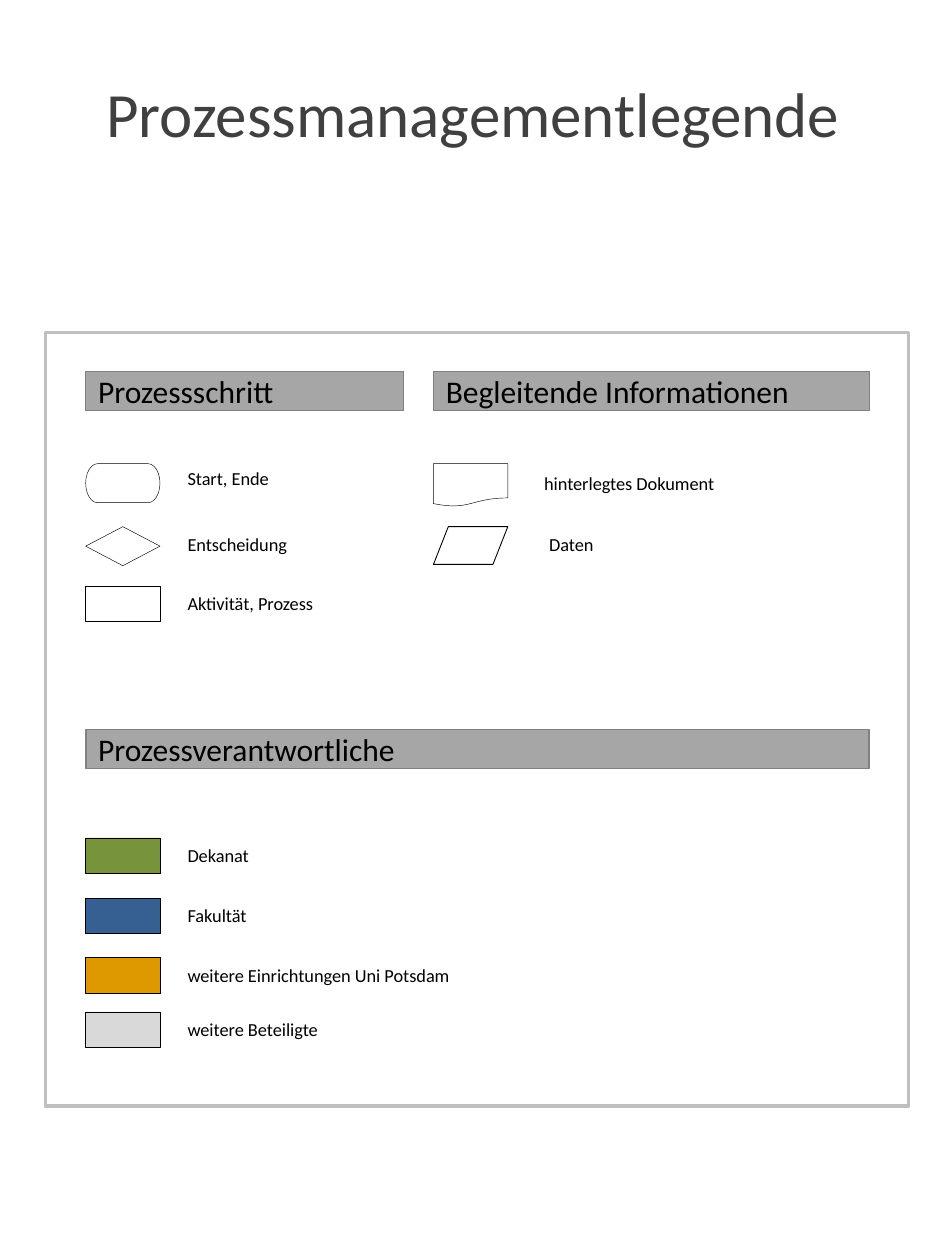
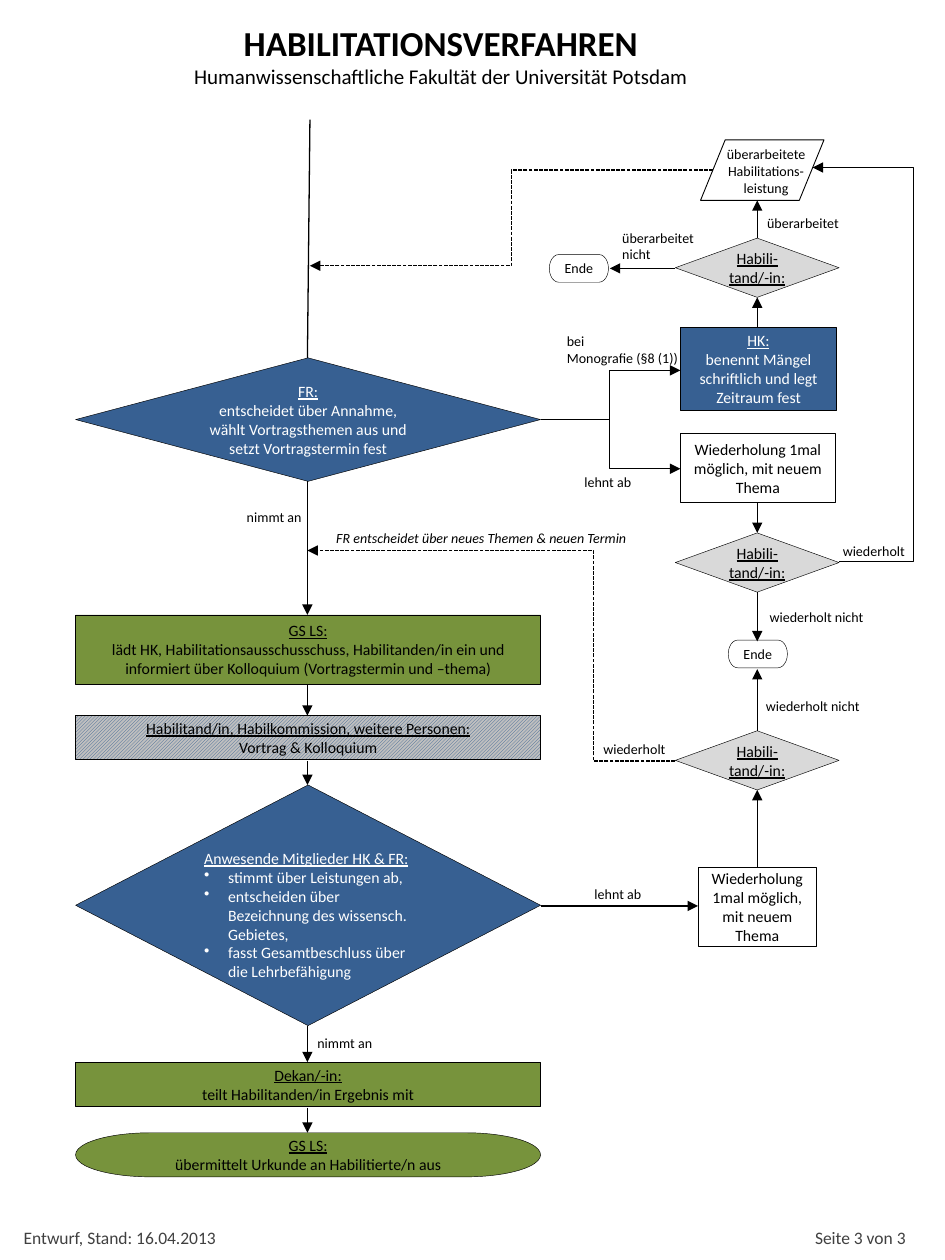
from lxml import etree
from pptx import Presentation
from pptx import util as u
from pptx.dml import color
from pptx.enum import dml, shapes, text
from pptx.oxml import ns

FONT = "Calibri"
COLORS = {
    "black": "000000",
    "white": "FFFFFF",
    "dark_grey": "404040",
    "band_line": "808080",
    "band": "A6A6A6",
    "frame": "BFBFBF",
    "light_grey": "D9D9D9",
    "green": "77933C",
    "blue": "376092",
    "orange": "DE9800",
}
RGB = {name: color.RGBColor.from_string(value) for name, value in COLORS.items()}
KIND = shapes.MSO_SHAPE
RECT, DECISION = KIND.RECTANGLE, KIND.FLOWCHART_DECISION
TERMINATOR, DATA = KIND.FLOWCHART_TERMINATOR, KIND.FLOWCHART_DATA
CENTER, LEFT = text.PP_ALIGN.CENTER, text.PP_ALIGN.LEFT
MIDDLE, TOP = text.MSO_ANCHOR.MIDDLE, text.MSO_ANCHOR.TOP


def write(slide, at, words="", head="", kind=None, fill=None, line="black", width=0.25,
          size=9, ink="black", align=LEFT, anchor=TOP, italic=False, bullets=False,
          side=0.1, top=0.05):
    """Add a shape of the given kind, or a text box, with an underlined head and text."""
    box = [u.Inches(length) for length in at]
    if kind is None:
        item = slide.shapes.add_textbox(*box)
    else:
        item = slide.shapes.add_shape(kind, *box)
        item.shadow.inherit = False
        item.line.color.rgb = RGB[line]
        item.line.width = u.Pt(width)
        if fill == "hatched":
            item.fill.patterned()
            item.fill.pattern = dml.MSO_PATTERN.LIGHT_UPWARD_DIAGONAL
            item.fill.fore_color.rgb = RGB["blue"]
            item.fill.back_color.rgb = RGB["frame"]
        elif fill:
            item.fill.solid()
            item.fill.fore_color.rgb = RGB[fill]
        else:
            item.fill.background()
    frame = item.text_frame
    frame.word_wrap = True
    frame.vertical_anchor = anchor
    frame.margin_left = frame.margin_right = u.Inches(side)
    frame.margin_top = u.Inches(top)
    lines = ([head] if head else []) + (words.split("\n") if words else [])
    for number, content in enumerate(lines):
        paragraph = frame.paragraphs[0] if number == 0 else frame.add_paragraph()
        paragraph.alignment = align
        is_head = bool(head) and number == 0
        if bullets and not is_head:
            props = paragraph._p.get_or_add_pPr()
            props.set("marL", str(u.Inches(0.19)))
            props.set("indent", str(-u.Inches(0.19)))
            etree.SubElement(props, ns.qn("a:buChar"), char="•")
        run = paragraph.add_run()
        run.text = content
        run.font.name, run.font.size = FONT, u.Pt(size)
        run.font.color.rgb = RGB[ink]
        run.font.underline = is_head
        run.font.italic = italic
    return frame


def link(slide, start, end, bend=None, dashed=False, arrow=True):
    """Draw a straight line, or an elbow whose upright part stands at x = bend."""
    route = shapes.MSO_CONNECTOR.STRAIGHT if bend is None else shapes.MSO_CONNECTOR.ELBOW
    joint = slide.shapes.add_connector(route, *[u.Inches(v) for v in (*start, *end)])
    joint.line.color.rgb = RGB["black"]
    joint.line.width = u.Pt(0.75)
    if dashed:
        joint.line.dash_style = dml.MSO_LINE.SQUARE_DOT
    props = joint._element.spPr
    if bend is not None:
        share = round((bend - start[0]) / (end[0] - start[0]) * 100000)
        guides = props.find(ns.qn("a:prstGeom")).get_or_add_avLst()
        etree.SubElement(guides, ns.qn("a:gd"), name="adj1", fmla=f"val {share}")
    if arrow:
        etree.SubElement(props.find(ns.qn("a:ln")), ns.qn("a:tailEnd"), type="triangle")
    etree.SubElement(props, ns.qn("a:effectLst"))


deck = Presentation()
deck.slide_width, deck.slide_height = u.Inches(7.5), u.Inches(10)
blank = deck.slide_layouts[6]

# Slide 1: legend
legend = deck.slides.add_slide(blank)
write(legend, (0.36, 2.64, 6.85, 6.14), kind=RECT, line="frame", width=2)
write(legend, (0.38, 0.4, 6.75, 0.98), "Prozessmanagementlegende", size=36,
      ink="dark_grey", align=CENTER, anchor=MIDDLE)

# Section bands
for left, top, width, border, section in [
    (0.68, 2.95, 2.52, 0.5, "Prozessschritt"),
    (3.44, 2.95, 3.46, 0.5, "Begleitende Informationen"),
    (0.68, 5.79, 6.22, 1, "Prozessverantwortliche"),
]:
    write(legend, (left, top, width, 0.31), section, kind=RECT, fill="band",
          line="band_line", width=border, size=18, anchor=MIDDLE)

# Symbols with their meanings
for kind, left, top, height, fill, border, label_left, label_top, meaning in [
    (TERMINATOR, 0.68, 3.68, 0.31, None, 0.25, 1.39, 3.66, "Start, Ende"),
    (DECISION, 0.68, 4.18, 0.31, None, 0.25, 1.39, 4.18, "Entscheidung"),
    (RECT, 0.68, 4.65, 0.28, None, 0.25, 1.39, 4.65, "Aktivität, Prozess"),
    (KIND.FLOWCHART_DOCUMENT, 3.44, 3.68, 0.34, None, 0.25, 4.22, 3.7,
     "hinterlegtes Dokument"),
    (DATA, 3.44, 4.18, 0.3, None, 0.5, 4.26, 4.18, "Daten"),
    (RECT, 0.68, 6.65, 0.28, "green", 0.25, 1.39, 6.65, "Dekanat"),
    (RECT, 0.68, 7.13, 0.28, "blue", 0.25, 1.39, 7.13, "Fakultät"),
    (RECT, 0.68, 7.6, 0.28, "orange", 0.25, 1.39, 7.6, "weitere Einrichtungen Uni Potsdam"),
    (RECT, 0.68, 8.03, 0.28, "light_grey", 0.25, 1.39, 8.03, "weitere Beteiligte"),
]:
    write(legend, (left, top, 0.59, height), kind=kind, fill=fill, width=border)
    write(legend, (label_left, label_top, 2.4, 0.28), meaning, size=10.5)

# Slide 2: habilitation procedure
process = deck.slides.add_slide(blank)
heading = write(process, (0.92, 0.12, 5.16, 0.64),
                "HABILITATIONSVERFAHREN\nHumanwissenschaftliche Fakultät der Universität Potsdam",
                size=12, align=CENTER)
name_font = heading.paragraphs[0].runs[0].font
name_font.size, name_font.bold = u.Pt(20), True

# Main column
for kind, top, height, fill, ink, head, words in [
    (DECISION, 2.84, 0.98, "blue", "white", "FR:",
     "entscheidet über Annahme, wählt Vortragsthemen aus und setzt Vortragstermin fest"),
    (RECT, 4.88, 0.55, "green", "black", "GS LS:",
     "lädt HK, Habilitationsausschusschuss, Habilitanden/in ein und "
     "informiert über Kolloquium (Vortragstermin und –thema)"),
    (RECT, 5.68, 0.35, "hatched", "black",
     "Habilitand/in, Habilkommission, weitere Personen:", "Vortrag & Kolloquium"),
    (RECT, 8.43, 0.35, "green", "black", "Dekan/-in:", "teilt Habilitanden/in Ergebnis mit"),
    (TERMINATOR, 8.99, 0.35, "green", "black", "GS LS:",
     "übermittelt Urkunde an Habilitierte/n aus"),
]:
    write(process, (0.6, top, 3.69, height), words, head=head, kind=kind, fill=fill,
          ink=ink, align=CENTER, anchor=MIDDLE)
write(process, (0.6, 6.23, 3.69, 1.91),
      "stimmt über Leistungen ab,\n"
      "entscheiden über Bezeichnung des wissensch. Gebietes,\n"
      "fasst Gesamtbeschluss über die Lehrbefähigung",
      head="Anwesende Mitglieder HK & FR:", kind=DECISION, fill="blue", ink="white",
      anchor=MIDDLE, bullets=True, top=0.2)

# Right column
write(process, (5.4, 2.6, 1.24, 0.66), "benennt Mängel schriftlich und legt Zeitraum fest",
      head="HK:", kind=RECT, fill="blue", ink="white", align=CENTER, anchor=MIDDLE)
for repeat in [(5.4, 3.44, 1.23, 0.55), (5.54, 6.88, 0.94, 0.63)]:
    write(process, repeat, "Wiederholung 1mal möglich, mit neuem Thema", kind=RECT,
          align=CENTER, anchor=MIDDLE)
for top in (1.89, 4.23, 5.8):
    write(process, (5.36, top, 1.3, 0.47), head="Habili-tand/-in:", kind=DECISION,
          fill="light_grey", align=CENTER, anchor=MIDDLE)
for left, top in [(4.36, 2.02), (5.78, 5.08)]:
    write(process, (left, top, 0.47, 0.22), "Ende", kind=TERMINATOR, size=8,
          align=CENTER, anchor=MIDDLE, side=0)
write(process, (5.37, 1.11, 1.42, 0.5), "überarbeitete Habilitations-\nleistung", size=8,
      align=CENTER)
write(process, (5.56, 1.11, 0.98, 0.48), kind=DATA, width=0.5)

# Straight links
link(process, (2.46, 0.95), (2.44, 2.84), arrow=False)
for start, end in [(3.82, 4.88), (5.43, 5.68), (6.04, 6.23), (8.14, 8.43), (8.79, 8.99)]:
    link(process, (2.44, start), (2.44, end))
for start, end in [(2.6, 2.36), (1.89, 1.59), (3.99, 4.23), (4.7, 5.09), (5.8, 5.31),
                   (6.88, 6.27)]:
    link(process, (6.01, start), (6.01, end))
link(process, (5.36, 2.13), (4.84, 2.13))
link(process, (4.29, 7.19), (5.54, 7.19))

# Elbow links
for branch in (2.94, 3.72):
    link(process, (4.29, 3.33), (5.4, branch), bend=4.84)
link(process, (6.66, 4.46), (6.45, 1.33), bend=7.25)
link(process, (5.66, 1.35), (2.46, 2.11), bend=4.06, dashed=True)
link(process, (5.36, 6.04), (2.44, 4.37), bend=4.71, dashed=True)

# Labels on the links
for left, top, width, label in [
    (1.86, 3.99, 0.71, "nimmt an"),
    (2.42, 8.16, 0.71, "nimmt an"),
    (4.54, 3.71, 0.6, "lehnt ab"),
    (4.62, 6.98, 1.14, "lehnt ab"),
    (4.84, 1.77, 0.87, "überarbeitet\nnicht"),
    (5.99, 1.65, 1.07, "überarbeitet"),
    (4.4, 2.59, 1.19, "bei\nMonografie (§8 (1))"),
    (6.59, 4.26, 0.81, "wiederholt"),
    (4.69, 5.83, 1.13, "wiederholt"),
    (6.01, 4.78, 1.13, "wiederholt nicht"),
    (5.98, 5.49, 1.13, "wiederholt nicht"),
]:
    write(process, (left, top, width, 0.37 if "\n" in label else 0.24), label, size=8)
write(process, (2.57, 4.15, 2.61, 0.24), "FR entscheidet über neues Themen & neuen Termin",
      size=8, italic=True)

# Footer
for left, width, note in [(0.09, 2.16, "Entwurf, Stand: 16.04.2013"),
                          (6.37, 1.09, "Seite 3 von 3")]:
    write(process, (left, 9.69, width, 0.27), note, size=10, ink="dark_grey")

deck.save("out.pptx")
